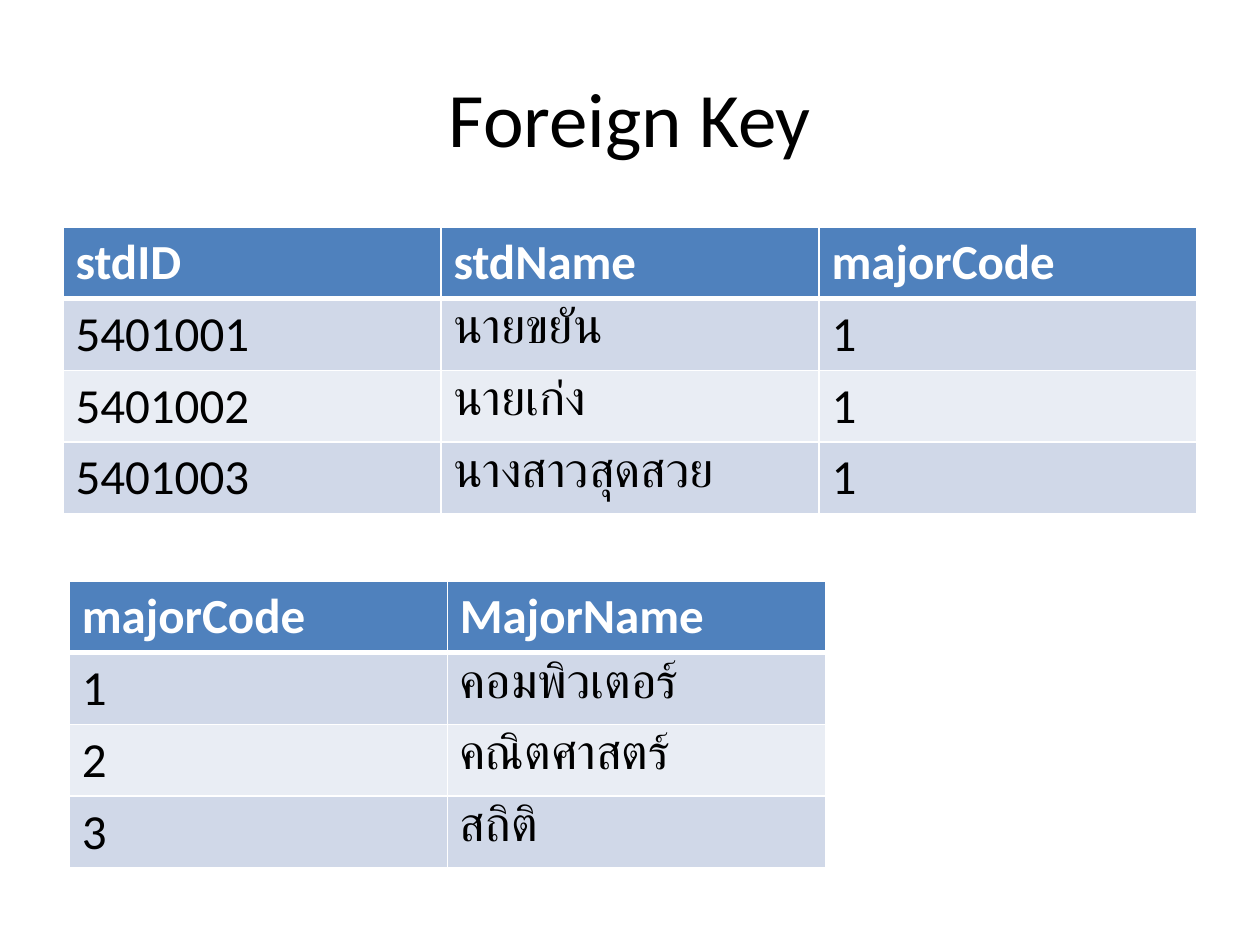
from dataclasses import dataclass

from lxml import etree
from pptx import Presentation
from pptx.dml.color import RGBColor
from pptx.enum.text import MSO_ANCHOR, PP_ALIGN
from pptx.oxml.ns import qn
from pptx.util import Pt

MIDDLE = MSO_ANCHOR.MIDDLE
CENTER = PP_ALIGN.CENTER


@dataclass(frozen=True)
class Theme:
    """Colours, font and type sizes of the slide."""
    font: str = "Calibri"
    title_size: int = 44
    table_size: int = 28
    text: str = "000000"
    rule: str = "FFFFFF"
    header_text: str = "FFFFFF"
    header_fill: str = "4F81BD"
    bands: tuple = ("D0D8E8", "E9EDF4")


THEME = Theme()
COLUMN_WIDTH = 216
ROW_HEIGHT = 41

STUDENTS = [
    ("stdID", "stdName", "majorCode"),
    ("5401001", "นายขยัน", "1"),
    ("5401002", "นายเก่ง", "1"),
    ("5401003", "นางสาวสุดสวย", "1"),
]
MAJORS = [
    ("majorCode", "MajorName"),
    ("1", "คอมพิวเตอร์"),
    ("2", "คณิตศาสตร์"),
    ("3", "สถิติ"),
]


def add_run(paragraph, wording, size, color, bold=False):
    """Append one styled run to a paragraph."""
    run = paragraph.add_run()
    run.text = wording
    run.font.name = THEME.font
    run.font.size = Pt(size)
    run.font.bold = bold
    run.font.color.rgb = RGBColor.from_string(color)


def add_borders(cell, bottom_width):
    """Rule the four sides of a cell, with its own width at the bottom."""
    properties = cell._tc.get_or_add_tcPr()
    for side, width in (("L", 1), ("R", 1), ("T", 1), ("B", bottom_width)):
        line = etree.SubElement(properties, qn(f"a:ln{side}"), w=str(Pt(width)))
        fill = etree.SubElement(line, qn("a:solidFill"))
        etree.SubElement(fill, qn("a:srgbClr"), val=THEME.rule)


def add_title(slide, left, top, width, height, wording):
    """Place the centred heading in its box."""
    heading = slide.shapes.add_textbox(Pt(left), Pt(top), Pt(width), Pt(height))
    frame = heading.text_frame
    frame.word_wrap = True
    frame.vertical_anchor = MIDDLE
    paragraph = frame.paragraphs[0]
    paragraph.alignment = CENTER
    add_run(paragraph, wording, THEME.title_size, THEME.text)


def add_relation(slide, left, top, records):
    """Place a banded table whose first record is the header."""
    columns = len(records[0])
    relation = slide.shapes.add_table(
        len(records), columns, Pt(left), Pt(top),
        Pt(COLUMN_WIDTH * columns), Pt(ROW_HEIGHT * len(records))).table
    for row, record in enumerate(records):
        is_header = row == 0
        fill = THEME.header_fill if is_header else THEME.bands[(row - 1) % 2]
        color = THEME.header_text if is_header else THEME.text
        for column, value in enumerate(record):
            cell = relation.cell(row, column)
            add_borders(cell, 3 if is_header else 1)
            cell.fill.solid()
            cell.fill.fore_color.rgb = RGBColor.from_string(fill)
            add_run(cell.text_frame.paragraphs[0], value,
                    THEME.table_size, color, is_header)


def main():
    """Build and save the slide."""
    deck = Presentation()
    deck.slide_width, deck.slide_height = Pt(720), Pt(540)
    slide = deck.slides.add_slide(deck.slide_layouts[6])
    add_title(slide, 36, 21.6, 648, 90, "Foreign Key")
    add_relation(slide, 36, 129.6, STUDENTS)
    add_relation(slide, 39.6, 332, MAJORS)
    deck.save("out.pptx")


if __name__ == "__main__":
    main()
